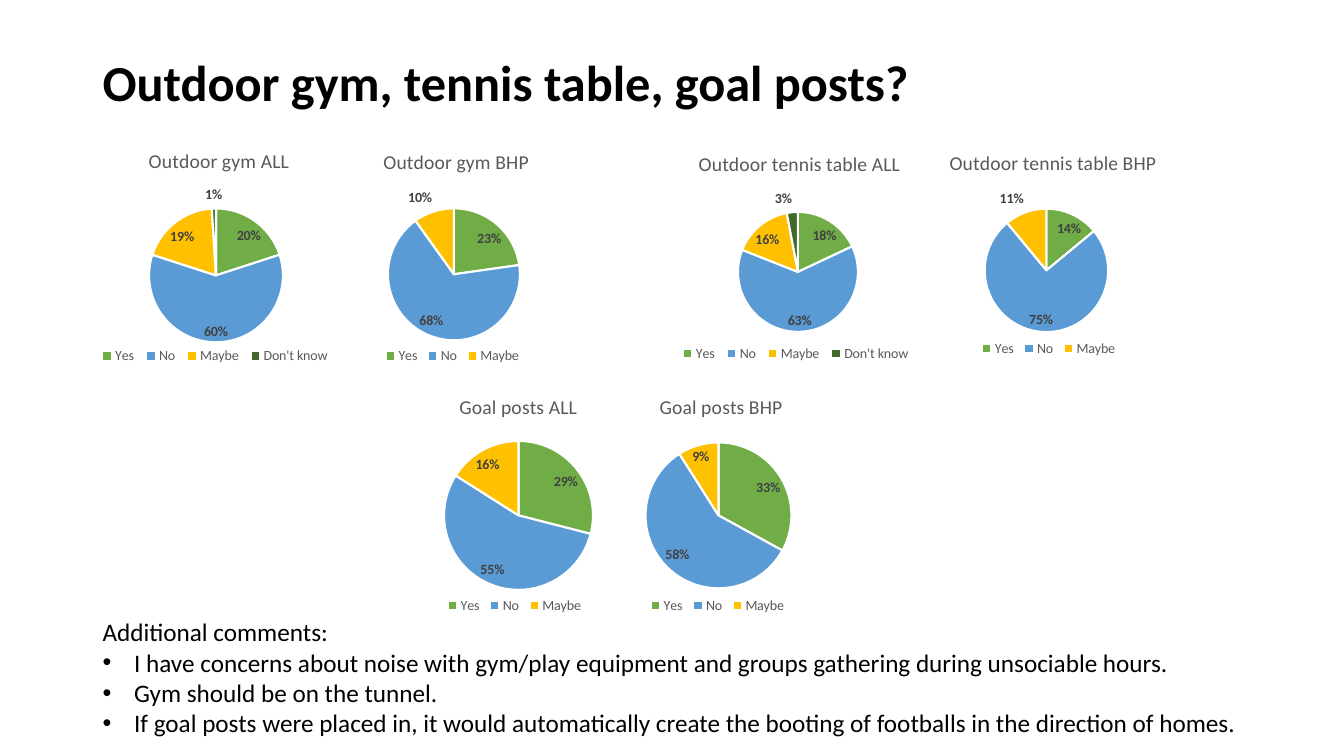
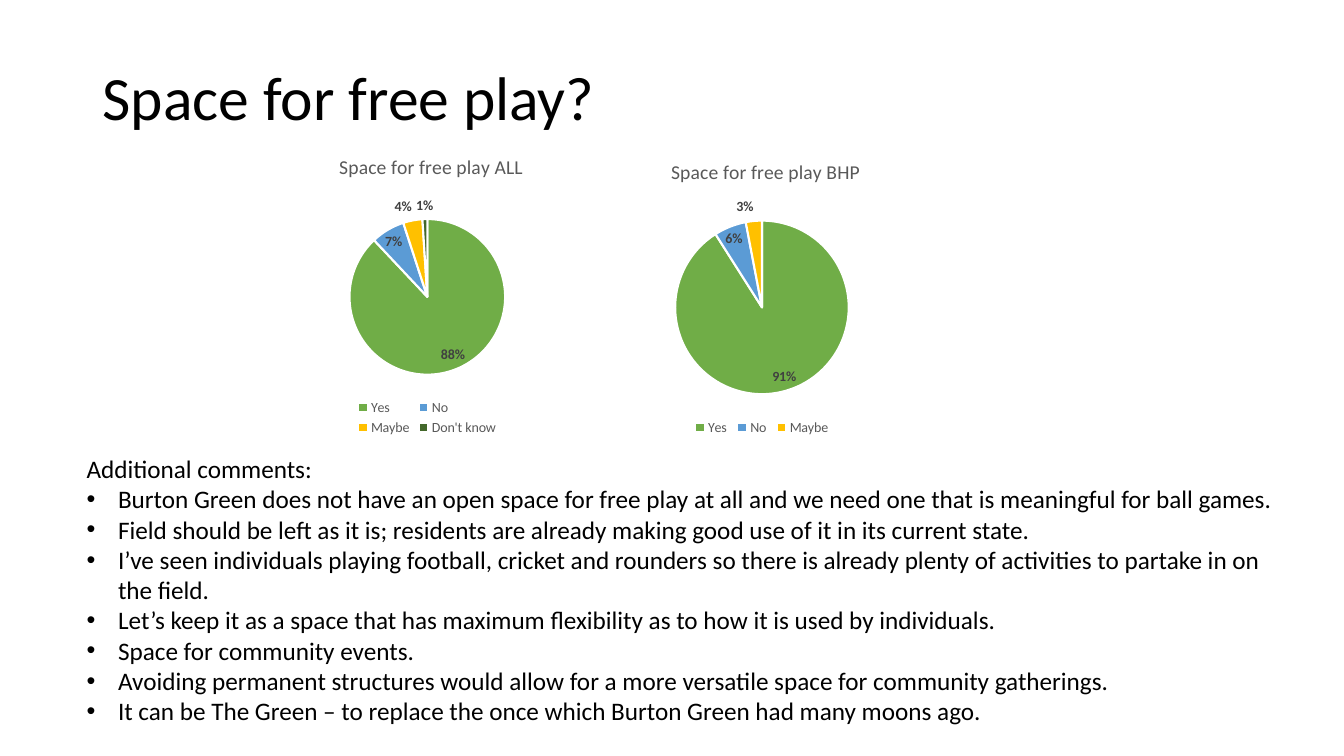
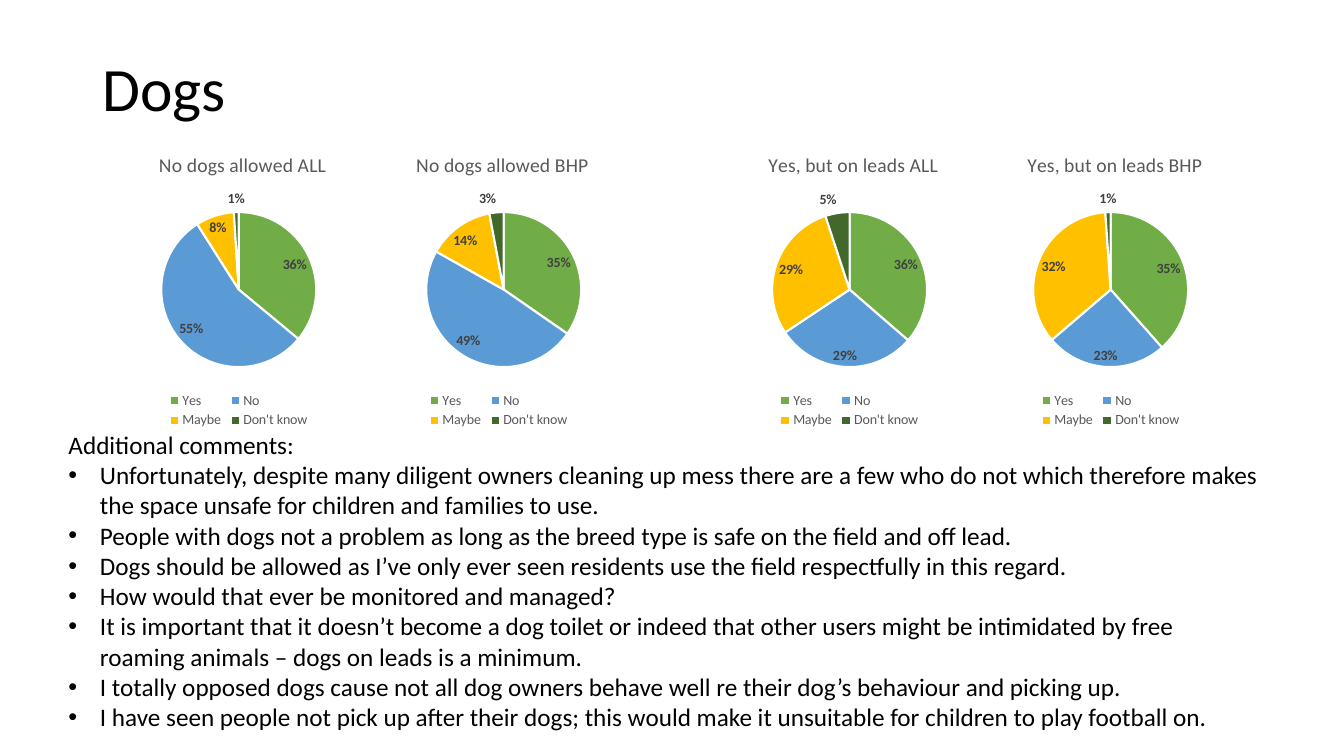
from dataclasses import dataclass

from lxml import etree
from pptx import Presentation
from pptx.chart import data as cd
from pptx.dml.color import RGBColor
from pptx.enum import chart as ec, text as et
from pptx.oxml import ns
from pptx.util import Pt


@dataclass(frozen=True)
class Theme:
    font: str = "Calibri"
    ink: str = "000000"
    label: str = "404040"
    muted: str = "595959"
    edge: str = "FFFFFF"
    slices: tuple = ("70AD47", "5B9BD5", "FFC000", "43682B")
    title: int = 44
    small_title: int = 36
    body: int = 18
    chart_title: int = 14
    chart_text: int = 10


@dataclass(frozen=True)
class Pie:
    title: str
    title_width: float
    title_y: float
    values: tuple
    box: tuple
    dx: float
    y: float
    size: float
    legend_y: float
    legend_rows: int = 1


T = Theme()
ANSWERS = ("Yes", "No", "Maybe", "Don't know")
LEGEND_WIDTHS = {(3, 1): 104, (4, 1): 172, (4, 2): 106}
LEGEND_HEIGHTS = {1: 17, 2: 31}
TITLE_LEFT, TITLE_TOP, TITLE_WIDTH = 66.2, 28.8, 828
BULLET_INDENT = 22.5


def style(font, size, color=T.ink, bold=False):
    font.name, font.size, font.bold = T.font, Pt(size), bold
    font.color.rgb = RGBColor.from_string(color)


def add_text(s, box):
    tf = s.shapes.add_textbox(*map(Pt, box)).text_frame
    tf.word_wrap = True
    return tf


def add_title(s, title, height, size=T.title, bold=False):
    tf = add_text(s, (TITLE_LEFT, TITLE_TOP, TITLE_WIDTH, height))
    tf.vertical_anchor = et.MSO_ANCHOR.MIDDLE
    p = tf.paragraphs[0]
    p.text, p.line_spacing = title, 0.9
    style(p.font, size, bold=bold)


def add_bullet(p):
    pr = p._p.get_or_add_pPr()
    pr.set("marL", str(Pt(BULLET_INDENT)))
    pr.set("indent", str(-Pt(BULLET_INDENT)))
    etree.SubElement(pr, ns.qn("a:buFont")).set("typeface", "Arial")
    etree.SubElement(pr, ns.qn("a:buChar")).set("char", "•")


def add_comments(s, box, comments):
    tf = add_text(s, box)
    tf.auto_size = et.MSO_AUTO_SIZE.SHAPE_TO_FIT_TEXT
    for i, line in enumerate(("Additional comments:", *comments)):
        p = tf.add_paragraph() if i else tf.paragraphs[0]
        p.text = line
        style(p.font, T.body)
        if i:
            add_bullet(p)


def make_layout(box, x, y, w=None, h=None, inner=False):
    layout = etree.Element(ns.qn("c:layout"))
    manual = etree.SubElement(layout, ns.qn("c:manualLayout"))
    settings = [("layoutTarget", "inner")] if inner else []
    settings += [("xMode", "edge"), ("yMode", "edge")]
    settings += [("x", x / box[2]), ("y", y / box[3])]
    if w:
        settings += [("w", w / box[2]), ("h", h / box[3])]
    for tag, value in settings:
        text = value if isinstance(value, str) else f"{value:.4f}"
        etree.SubElement(manual, ns.qn("c:" + tag)).set("val", text)
    return layout


def set_layout(parent, layout, after=None):
    for old in parent.findall(ns.qn("c:layout")):
        parent.remove(old)
    if after:
        parent.find(ns.qn(after)).addnext(layout)
    else:
        parent.insert(0, layout)


def add_pie(s, pie):
    count = len(pie.values)
    data = cd.CategoryChartData(number_format="0%")
    data.categories = ANSWERS[:count]
    data.add_series("Series 1", pie.values)
    chart = s.shapes.add_chart(ec.XL_CHART_TYPE.PIE, *map(Pt, pie.box), data).chart
    style(chart.font, T.chart_text)
    root = chart._chartSpace
    frame = etree.Element(ns.qn("c:spPr"))
    etree.SubElement(frame, ns.qn("a:noFill"))
    etree.SubElement(etree.SubElement(frame, ns.qn("a:ln")), ns.qn("a:noFill"))
    root.find(ns.qn("c:chart")).addnext(frame)

    chart.has_title = True
    title = chart.chart_title
    p = title.text_frame.paragraphs[0]
    p.text = pie.title
    style(p.font, T.chart_title, T.muted)
    style(p.runs[0].font, T.chart_title, T.muted)
    center = pie.box[2] / 2
    set_layout(title._element, make_layout(
        pie.box, center - pie.title_width / 2, pie.title_y - 8.5), "c:tx")

    chart.has_legend = True
    legend = chart.legend
    legend.position = ec.XL_LEGEND_POSITION.BOTTOM
    legend.include_in_layout = False
    style(legend.font, T.chart_text, T.muted)
    w = LEGEND_WIDTHS[count, pie.legend_rows]
    h = LEGEND_HEIGHTS[pie.legend_rows]
    set_layout(legend._element, make_layout(
        pie.box, center - w / 2, pie.legend_y - h / 2, w, h), "c:legendPos")

    half = pie.size / 2
    set_layout(root.find(".//" + ns.qn("c:plotArea")), make_layout(
        pie.box, center + pie.dx - half, pie.y - half, pie.size, pie.size, True))
    plot = chart.plots[0]
    plot.vary_by_categories = True
    for i in range(count):
        fmt = plot.series[0].points[i].format
        fmt.fill.solid()
        fmt.fill.fore_color.rgb = RGBColor.from_string(T.slices[i])
        fmt.line.color.rgb = RGBColor.from_string(T.edge)
        fmt.line.width = Pt(1.5)
    labels = plot.series[0].data_labels
    labels.show_value, labels.show_percentage = True, False
    labels.number_format, labels.number_format_is_linked = "0%", False
    labels.position = ec.XL_LABEL_POSITION.BEST_FIT
    style(labels.font, T.chart_text, T.label, True)


def add_survey_slide(prs, title, pies, comments_box, comments):
    s = prs.slides.add_slide(prs.slide_layouts[6])
    add_title(s, **title)
    for pie in pies:
        add_pie(s, pie)
    add_comments(s, comments_box, comments)


EQUIPMENT = (
    Pie("Outdoor gym ALL", 100, 20, (0.2, 0.6, 0.19, 0.01),
        (55.4, 91.4, 196.6, 186.5), 0.6, 105.4, 95.7, 163),
    Pie("Outdoor gym BHP", 104, 20.6, (0.23, 0.68, 0.1),
        (220.3, 91.4, 205.9, 184.3), 1, 104.6, 94.3, 163),
    Pie("Outdoor tennis table ALL", 144, 20.3, (0.18, 0.63, 0.16, 0.03),
        (466.6, 92.9, 203.8, 177.1), 1.5, 101.4, 85.7, 159.5),
    Pie("Outdoor tennis table BHP", 147, 19.7, (0.14, 0.75, 0.11),
        (647.3, 92.9, 203.8, 177.1), -1.7, 100.3, 88.2, 156),
    Pie("Goal posts ALL", 84, 27, (0.29, 0.55, 0.16),
        (265.7, 259.9, 203.8, 194.4), 2.8, 108.3, 106.4, 172.6),
    Pie("Goal posts BHP", 88, 28.5, (0.33, 0.58, 0.09),
        (409.7, 258.5, 205.9, 194.4), 0.6, 109.7, 104.3, 174),
)
FREE_PLAY = (
    Pie("Space for free play ALL", 131, 17.5, (0.88, 0.07, 0.04, 0.01),
        (191.5, 97.9, 227.5, 216), 0, 114.2, 111.2, 200.3, 2),
    Pie("Space for free play BHP", 135, 21.1, (0.91, 0.06, 0.03),
        (429.8, 97.9, 229, 216), 0, 121.7, 124, 207.5),
)
DOGS = tuple(
    Pie(name, width, 20.8, values, (left, 92.9, 234.5, 216), dx, 114, 110.7, 200.3, 2)
    for name, width, values, left, dx in (
        ("No dogs allowed ALL", 119, (0.36, 0.55, 0.08, 0.01), 53.3, 0),
        ("No dogs allowed BHP", 123, (0.35, 0.49, 0.14, 0.03), 239, 3.6),
        ("Yes, but on leads ALL", 121, (0.36, 0.29, 0.29, 0.05), 489.6, 0),
        ("Yes, but on leads BHP", 124, (0.35, 0.23, 0.32, 0.01), 676.1, 0),
    )
)


def main():
    prs = Presentation()
    prs.slide_width, prs.slide_height = Pt(960), Pt(540)
    add_survey_slide(
        prs,
        dict(title="Outdoor gym, tennis table, goal posts?", height=64,
             size=T.small_title, bold=True),
        EQUIPMENT, (66.2, 437, 886.3, 94.3),
        ("I have concerns about noise with gym/play equipment and groups gathering during unsociable hours.",
         "Gym should be on the tunnel.",
         "If goal posts were placed in, it would automatically create the booting of footballs in the direction of homes."))
    add_survey_slide(
        prs, dict(title="Space for free play?", height=86.4),
        FREE_PLAY, (54.7, 320.4, 867.6, 203.8),
        ("Burton Green does not have an open space for free play at all and we need one that is meaningful for ball games.",
         "Field should be left as it is; residents are already making good use of it in its current state.",
         "I’ve seen individuals playing football, cricket and rounders so there is already plenty of activities to partake in on the field.",
         "Let’s keep it as a space that has maximum flexibility as to how it is used by individuals.",
         "Space for community events.",
         "Avoiding permanent structures would allow for a more versatile space for community gatherings.",
         "It can be The Green – to replace the once which Burton Green had many moons ago."))
    add_survey_slide(
        prs, dict(title="Dogs", height=72.7),
        DOGS, (41.8, 303.1, 867.6, 247),
        ("Unfortunately, despite many diligent owners cleaning up mess there are a few who do not which therefore makes the space unsafe for children and families to use.",
         "People with dogs not a problem as long as the breed type is safe on the field and off lead.",
         "Dogs should be allowed as I’ve only ever seen residents use the field respectfully in this regard.",
         "How would that ever be monitored and managed?",
         "It is important that it doesn’t become a dog toilet or indeed that other users might be intimidated by free roaming animals – dogs on leads is a minimum.",
         "I totally opposed dogs cause not all dog owners behave well re their dog’s behaviour and picking up.",
         "I have seen people not pick up after their dogs; this would make it unsuitable for children to play football on."))
    prs.save("out.pptx")


if __name__ == "__main__":
    main()
